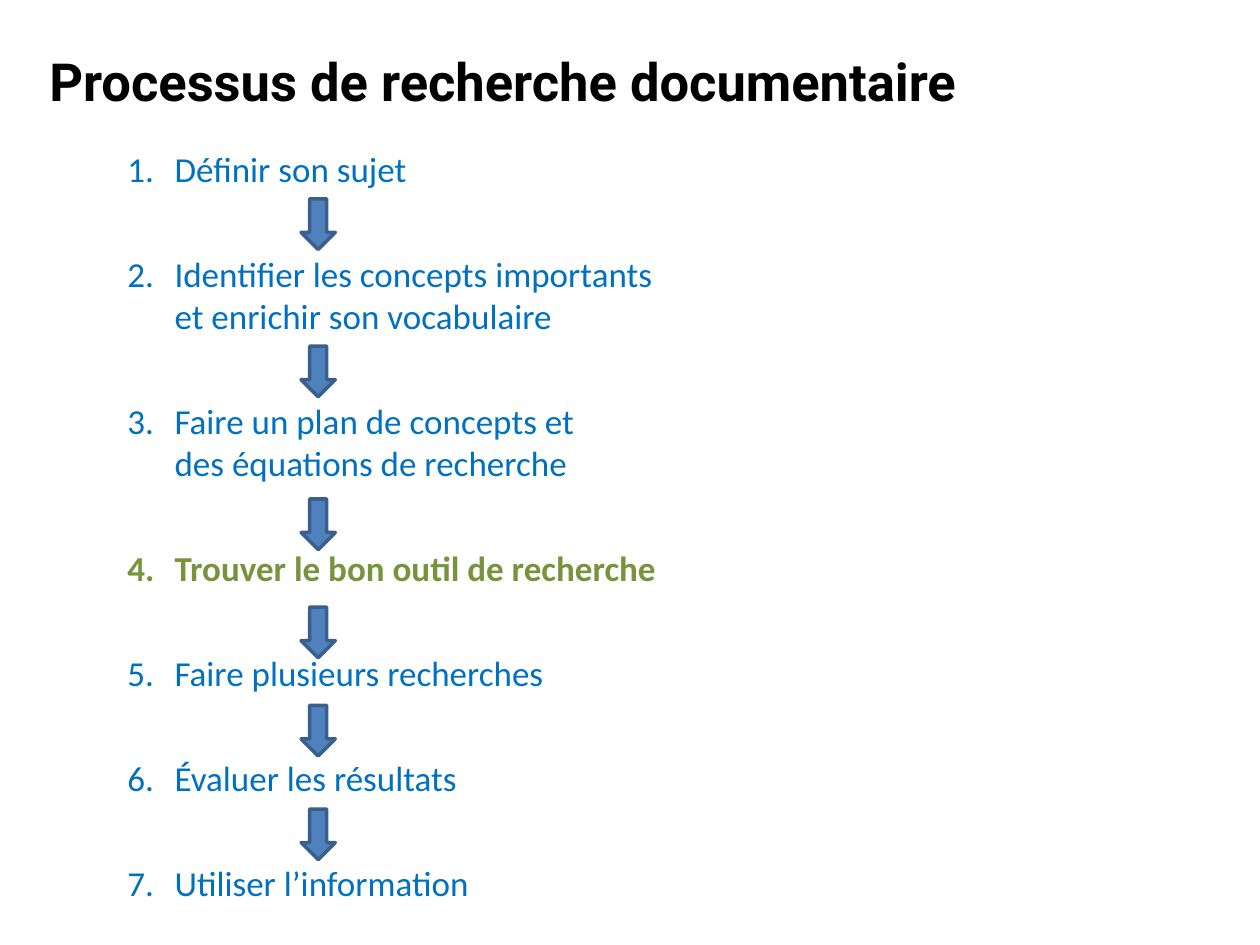
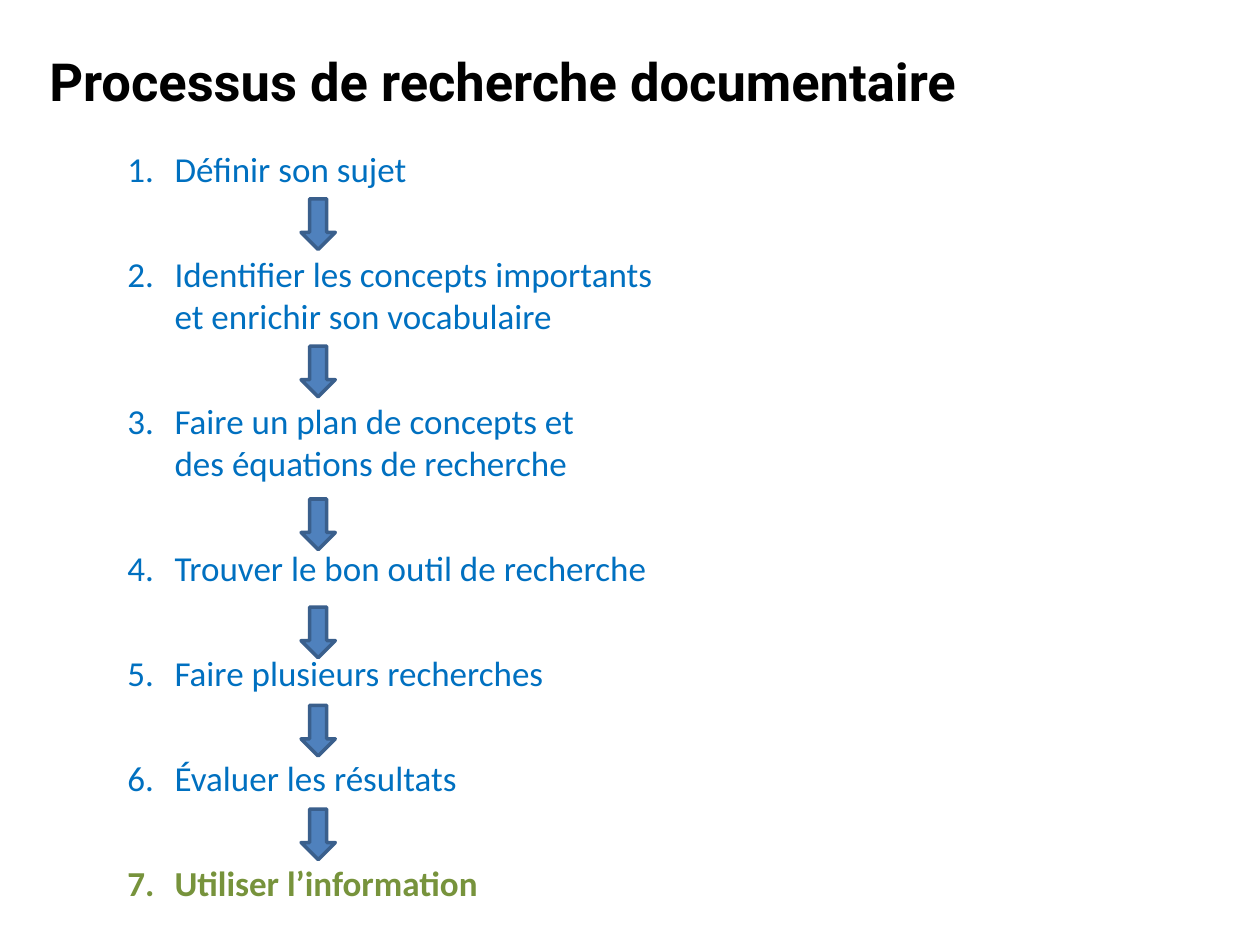
from lxml import etree
from pptx import Presentation
from pptx.dml.color import RGBColor
from pptx.enum.shapes import MSO_SHAPE
from pptx.enum.text import MSO_ANCHOR, MSO_AUTO_SIZE, PP_ALIGN
from pptx.oxml.ns import qn
from pptx.util import Cm, Pt

DOWN_ARROW = MSO_SHAPE.DOWN_ARROW
MIDDLE, TOP = MSO_ANCHOR.MIDDLE, MSO_ANCHOR.TOP
LEFT = PP_ALIGN.LEFT
NO_AUTOFIT = MSO_AUTO_SIZE.NONE

BLACK = RGBColor(0x00, 0x00, 0x00)
STEP_BLUE = RGBColor(0x00, 0x70, 0xC0)
CURRENT_GREEN = RGBColor(0x77, 0x93, 0x3C)
ARROW_FILL = RGBColor(0x4F, 0x81, 0xBD)
ARROW_LINE = RGBColor(0x3A, 0x5F, 0x8C)

TITLE = "Processus de recherche documentaire"
STEPS = [
    "Définir son sujet",
    "Identifier les concepts importants \vet enrichir son vocabulaire",
    "Faire un plan de concepts et \vdes équations de recherche",
    "Trouver le bon outil de recherche",
    "Faire plusieurs recherches",
    "Évaluer les résultats",
    "Utiliser l’information",
]
ARROW_TOPS = [4.01, 6.98, 10.06, 12.24, 14.22, 16.31]
CURRENT_STEPS = [4, 7]  # the step highlighted on each slide


def style_runs(paragraph, font_name, size, color, bold):
    for run in paragraph.runs:
        run.font.name = font_name
        run.font.size = Pt(size)
        run.font.color.rgb = color
        run.font.bold = bold


def number_paragraph(paragraph):
    """Give the paragraph a hanging automatic number (1., 2., ...)."""
    properties = paragraph._p.get_or_add_pPr()
    properties.set("marL", str(Cm(2)))
    properties.set("indent", str(-Cm(0.95)))
    etree.SubElement(properties, qn("a:buFont"), typeface="+mj-lt")
    etree.SubElement(properties, qn("a:buAutoNum"), type="arabicPeriod")


prs = Presentation()
prs.slide_width, prs.slide_height = Cm(25.4), Cm(19.05)
title_only = prs.slide_layouts[5]

for current_step in CURRENT_STEPS:
    slide = prs.slides.add_slide(title_only)

    title = slide.shapes.title
    title.left, title.top = Cm(0.74), Cm(0.03)
    title.width, title.height = Cm(23.39), Cm(3.17)
    title.text_frame.text = TITLE
    title.text_frame.auto_size = NO_AUTOFIT
    title.text_frame.vertical_anchor = MIDDLE
    heading = title.text_frame.paragraphs[0]
    heading.alignment = LEFT
    style_runs(heading, "Roboto", 30, BLACK, True)

    process = slide.shapes.add_textbox(Cm(1.27), Cm(2.84), Cm(14), Cm(15.93)).text_frame
    process.word_wrap = True
    process.vertical_anchor = TOP
    for number, wording in enumerate(STEPS, start=1):
        step = process.paragraphs[0] if number == 1 else process.add_paragraph()
        step.text = wording
        step.space_after = Pt(36)
        number_paragraph(step)
        is_current = number == current_step
        color = CURRENT_GREEN if is_current else STEP_BLUE
        style_runs(step, "Calibri", 20, color, is_current)

    for arrow_top in ARROW_TOPS:
        arrow = slide.shapes.add_shape(DOWN_ARROW, Cm(6.07), Cm(arrow_top), Cm(0.69), Cm(1.02))
        arrow.shadow.inherit = False
        arrow.fill.solid()
        arrow.fill.fore_color.rgb = ARROW_FILL
        arrow.line.color.rgb = ARROW_LINE
        arrow.line.width = Pt(2)

prs.save("out.pptx")
